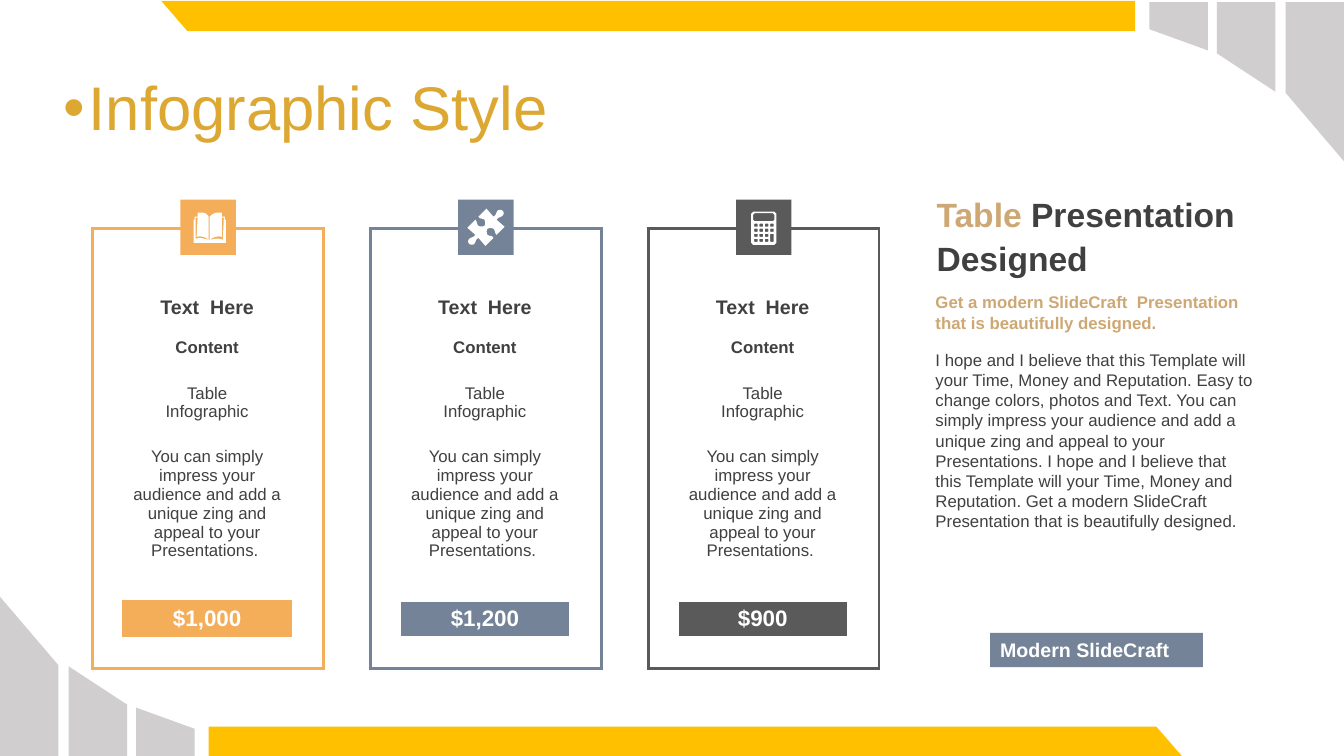
from dataclasses import dataclass

from lxml import etree
from pptx import Presentation
from pptx.dml.color import RGBColor
from pptx.enum.shapes import MSO_SHAPE
from pptx.enum.text import MSO_ANCHOR, MSO_AUTO_SIZE, PP_ALIGN
from pptx.oxml.ns import qn
from pptx.util import Inches, Pt

RECT = MSO_SHAPE.RECTANGLE
LEFT, CENTER = PP_ALIGN.LEFT, PP_ALIGN.CENTER
TOP, MIDDLE = MSO_ANCHOR.TOP, MSO_ANCHOR.MIDDLE
NO_FIT = MSO_AUTO_SIZE.NONE
PLAIN_TABLE = "{2D5ABB26-0587-4C30-8999-92F81FD0307C}"

# The grid has square cells of a tenth of an inch
COLS, ROWS = 133.3, 75
CARD_COLS = (2.9, 16.9, 3.1)
CARD_ROWS = (5.9, 3.9, 3.9, 7.1, 13, 3, 3.7, 3)
CARD_LEFT, CARD_TOP, CARD_STEP = 9.2, 22.7, 27.55
TILE_DX, TILE_TOP, TILE = 8.7, 19.8, 5.5


@dataclass(frozen=True)
class Theme:
    font: str = "Arial"
    yellow: str = "FFC000"
    grey: str = "D0CECE"
    gold: str = "DDA832"
    sand: str = "CDA874"
    orange: str = "F4AE59"
    slate: str = "748398"
    dark: str = "5A5A5A"
    ink: str = "404040"
    white: str = "FFFFFF"
    title: int = 44
    heading: int = 24
    price: int = 16
    label: int = 14
    body: int = 12
    border: float = 2.25


def u(n):
    return Inches(n / 10)


def rgb(color):
    return RGBColor.from_string(color)


def flatten(path, steps=6):
    """Turn points and six-number Bezier segments into plain points."""
    points = []
    for seg in path:
        if len(seg) == 2:
            points.append(seg)
            continue
        (x0, y0), (x1, y1, x2, y2, x3, y3) = points[-1], seg
        for i in range(1, steps + 1):
            t = i / steps
            a, b, c, d = (1 - t) ** 3, 3 * t * (1 - t) ** 2, 3 * t * t * (1 - t), t ** 3
            points.append((a * x0 + b * x1 + c * x2 + d * x3,
                           a * y0 + b * y1 + c * y2 + d * y3))
    return points


def box(x, y, w, h, cut=0.4):
    """Outline of a box with clipped corners."""
    r, b = x + w, y + h
    return [(x + cut, y), (r - cut, y), (r, y + cut), (r, b - cut),
            (r - cut, b), (x + cut, b), (x, b - cut), (x, y + cut)]


class Deck:
    def __init__(self, prs, theme):
        self.theme = theme
        self.slide = prs.slides.add_slide(prs.slide_layouts[5])

    def paint(self, sp, color):
        sp.shadow.inherit = False
        sp.fill.solid()
        sp.fill.fore_color.rgb = rgb(color)
        sp.line.fill.background()

    def style(self, r, size, color, bold=False):
        f = r.font
        f.name, f.size, f.bold = self.theme.font, Pt(size), bold
        f.color.rgb = rgb(color)

    def title(self, text, x, y, w, h):
        sp = self.slide.shapes.title
        sp.left, sp.top, sp.width, sp.height = u(x), u(y), u(w), u(h)
        tf = sp.text_frame
        tf.text = text
        tf.vertical_anchor, tf.auto_size = TOP, NO_FIT
        p = tf.paragraphs[0]
        p.alignment, p.line_spacing = LEFT, 0.9
        pPr = p._p.get_or_add_pPr()
        pPr.set("marL", str(u(2.5)))
        pPr.set("indent", str(-u(2.5)))
        etree.SubElement(pPr, qn("a:buFont")).set("typeface", self.theme.font)
        etree.SubElement(pPr, qn("a:buChar")).set("char", "•")
        self.style(p.runs[0], self.theme.title, self.theme.gold)

    def text(self, runs, x, y, w, h, size, bold=False, anchor=TOP, spacing=None):
        tf = self.slide.shapes.add_textbox(u(x), u(y), u(w), u(h)).text_frame
        tf.word_wrap, tf.vertical_anchor = True, anchor
        p = tf.paragraphs[0]
        p.line_spacing = spacing
        for text, color in runs:
            r = p.add_run()
            r.text = text
            self.style(r, size, color, bold)

    def rect(self, x, y, w, h, color, label=""):
        sp = self.slide.shapes.add_shape(RECT, u(x), u(y), u(w), u(h))
        self.paint(sp, color)
        if label:
            sp.text_frame.text = label
            p = sp.text_frame.paragraphs[0]
            p.alignment = LEFT
            self.style(p.runs[0], self.theme.label, self.theme.white, True)

    def outline(self, paths, color, x=0, y=0, unit=1):
        contours = [[(u(x + px * unit), u(y + py * unit)) for px, py in flatten(path)]
                    for path in paths]
        fb = self.slide.shapes.build_freeform(*contours[0][0], scale=1.0)
        for i, points in enumerate(contours):
            if i:
                fb.move_to(*points[0])
            fb.add_line_segments(points[1:], close=True)
        self.paint(fb.convert_to_shape(), color)

    def edge(self, cell, sides, color):
        tcPr = cell._tc.get_or_add_tcPr()
        for i, side in enumerate(s for s in "LRTB" if s in sides):
            ln = etree.Element(qn("a:ln" + side), w=str(Pt(self.theme.border)))
            fill = etree.SubElement(ln, qn("a:solidFill"))
            etree.SubElement(fill, qn("a:srgbClr")).set("val", color)
            tcPr.insert(i, ln)

    def card(self, x, y, color, price, white_frame):
        th = self.theme
        rows = {1: ("Text  Here", th.label, th.ink, True),
                2: ("Content", th.body, th.ink, True),
                3: ("Table\nInfographic", th.body, th.ink, False),
                4: ("You can simply impress your audience and add a unique zing "
                    "and appeal to your Presentations. ", th.body, th.ink, False),
                6: (price, th.price, th.white, True)}
        frame = self.slide.shapes.add_table(len(CARD_ROWS), len(CARD_COLS), u(x), u(y),
                                            u(sum(CARD_COLS)), u(sum(CARD_ROWS)))
        table = frame.table
        table._tbl.tblPr.find(qn("a:tableStyleId")).text = PLAIN_TABLE
        table.first_row = table.horz_banding = False
        for col, width in zip(table.columns, CARD_COLS):
            col.width = u(width)
        for i, height in enumerate(CARD_ROWS):
            table.rows[i].height = u(height)
            for j in range(len(CARD_COLS)):
                cell = table.cell(i, j)
                cell.margin_top = cell.margin_bottom = 0
                cell.vertical_anchor = MIDDLE
                is_price = (i, j) == (6, 1)
                cell.fill.solid()
                cell.fill.fore_color.rgb = rgb(color if is_price else th.white)
                sides = ("L", "", "R")[j] + {0: "T", len(CARD_ROWS) - 1: "B"}.get(i, "")
                self.edge(cell, sides, color)
                if is_price and white_frame:
                    self.edge(cell, "LRTB", th.white)
                if j == 1 and i in rows:
                    text, *look = rows[i]
                    cell.text_frame.text = text
                    for p in cell.text_frame.paragraphs:
                        p.alignment = CENTER
                        self.style(p.runs[0], *look)


# Icons, in hundredths of an inch from the corner of their tile
BOOK = [[(28, 40), (29, 40), (34, 39, 37, 38, 42, 40), (43, 18), (41, 18), (41, 37),
         (37, 36, 33, 37, 29, 40), (29, 17), (32, 14, 34, 13, 37, 13), (41, 13), (41, 17),
         (44, 17), (44, 20), (45, 20), (45, 43), (13, 43), (13, 20), (14, 20), (14, 17),
         (17, 17), (17, 13), (21, 13), (24, 13, 26, 14, 28, 17), (28, 40),
         (25, 37, 20, 36, 16, 37), (17, 18), (15, 18), (15, 39), (20, 37, 23, 39, 28, 40)]]
HALF_PUZZLE = [(44, 11), (45, 12, 46, 14, 44, 16), (42, 18, 40, 17, 38, 20), (46, 27),
               (38, 35), (36, 33, 37, 31, 35, 29), (33, 28, 31, 28, 29, 29),
               (28, 30, 28, 33, 29, 35), (32, 37, 33, 35, 35, 38), (27, 46), (20, 38),
               (17, 40, 18, 41, 16, 44), (15, 45, 12, 45, 11, 44)]
PUZZLE = [HALF_PUZZLE + [tuple(55 - n for n in seg) for seg in HALF_PUZZLE[1:]]]
KEYS = [box(18 + 5.3 * c, 24 + 5 * r, 3.5, 8 if (c, r) == (3, 2) else 3)
        for c in range(4) for r in range(4) if (c, r) != (3, 3)]
CALCULATOR = [box(15, 12, 25, 33, 2), box(17, 13.5, 21, 8, 1.5)] + KEYS


def main():
    prs = Presentation()
    prs.slide_width, prs.slide_height = u(COLS), u(ROWS)
    th = Theme()
    deck = Deck(prs, th)

    # Corner blades and bars, repeated half a turn round
    bands = [([(20.7, 72.1), (114.7, 72.1), (117.3, 75.1), (20.7, 75.1)], th.yellow)]
    for x, left_y, right_y in ((13.5, 70.2, 72.3), (6.8, 66.1, 69.9), (0, 59.2, 66)):
        bands.append(([(x, left_y), (x + 5.8, right_y), (x + 5.8, 75), (x, 75)], th.grey))
    for points, color in bands:
        deck.outline([points], color)
        deck.outline([[(COLS - x, 75.2 - y) for x, y in points]], color)

    deck.title("Infographic Style", 5.3, 7.2, 126.6, 7.9)

    # Price cards
    cards = ((th.orange, "$1,000", BOOK), (th.slate, "$1,200", PUZZLE),
             (th.dark, "$900", CALCULATOR))
    for i, (color, price, icon) in enumerate(cards):
        x = CARD_LEFT + i * CARD_STEP
        deck.card(x, CARD_TOP, color, price, white_frame=i > 0)
        deck.rect(x + TILE_DX, TILE_TOP, TILE, TILE, color)
        deck.outline(icon, th.white, x + TILE_DX, TILE_TOP, 0.1)

    # Right-hand text
    deck.text([("Table", th.sand), (" Presentation Designed", th.ink)],
              91.9, 18, 33.8, 10.4, th.heading, True, MIDDLE, 1.1)
    deck.rect(98.2, 62.8, 21.1, 3.4, th.slate, "Modern SlideCraft")
    deck.text([("Get a modern SlideCraft  Presentation that is beautifully designed.",
                th.sand)], 91.8, 28.5, 33.9, 5, th.body, True)
    deck.text([("I hope and I believe that this Template will your Time, Money and "
                "Reputation. Easy to change colors, photos and Text. You can simply impress "
                "your audience and add a unique zing and appeal to your Presentations. I hope "
                "and I believe that this Template will your Time, Money and Reputation. Get a "
                "modern SlideCraft  Presentation that is beautifully designed.", th.ink)],
              91.8, 34.2, 33.9, 19.2, th.body)
    prs.save("out.pptx")


if __name__ == "__main__":
    main()
